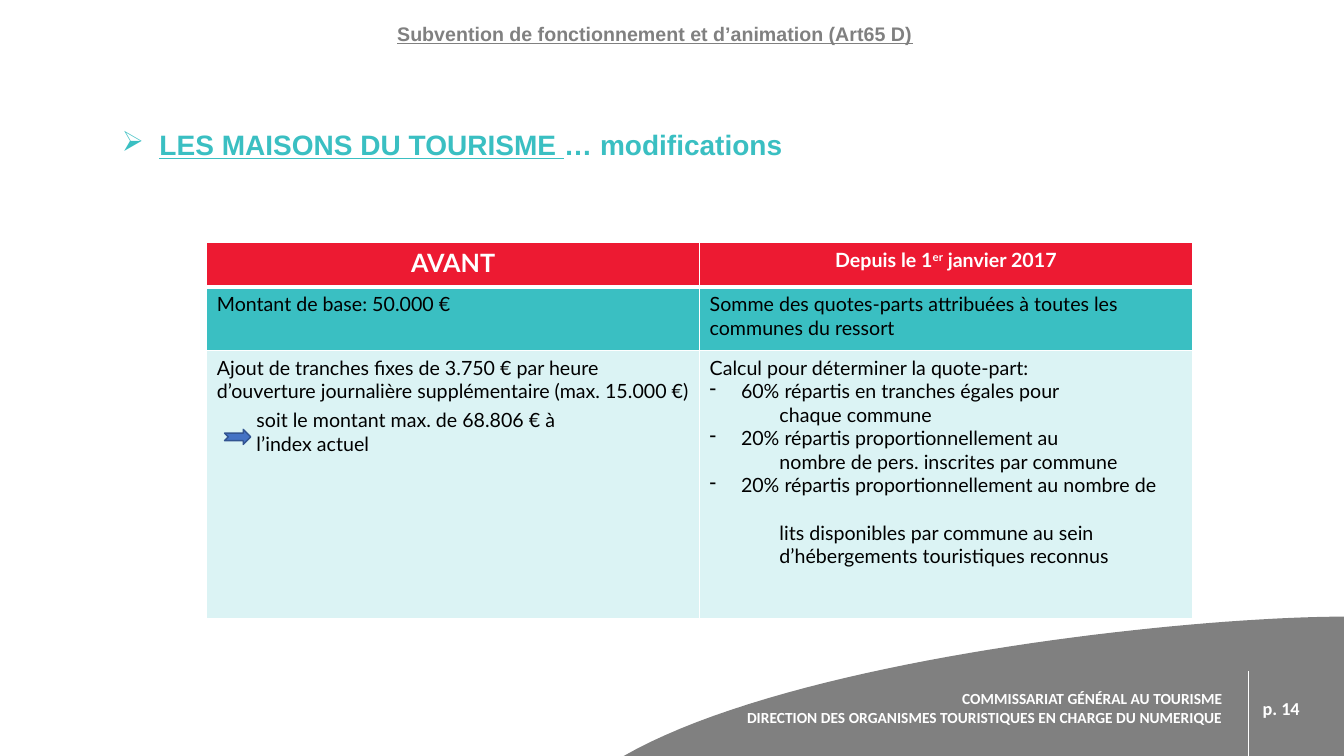
from lxml.etree import SubElement
from pptx import Presentation
from pptx.dml.color import RGBColor
from pptx.enum.shapes import MSO_CONNECTOR, MSO_SHAPE
from pptx.enum.text import MSO_ANCHOR, PP_ALIGN
from pptx.oxml.ns import qn
from pptx.util import Cm, Pt

WHITE = RGBColor(0xFF, 0xFF, 0xFF)
BLACK = RGBColor(0, 0, 0)
GREY = RGBColor(0x80, 0x80, 0x80)
RED = RGBColor(0xED, 0x1A, 0x32)
TEAL = RGBColor(0x3A, 0xBF, 0xC2)
PALE_TEAL = RGBColor(0xDB, 0xF3, 0xF4)
BLUE = RGBColor(0x44, 0x72, 0xC4)
DARK_BLUE = RGBColor(0x32, 0x54, 0x91)

SLIDE_WIDTH, SLIDE_HEIGHT = 33.87, 19.05
DASH = dict(bullet="-", indent=0.79, hanging=0.79)
CONTINUED = dict(indent=1.76)

BEFORE = [
    ("Ajout de tranches fixes de 3.750 € par heure d’ouverture journalière "
     "supplémentaire (max. 15.000 €)", {}),
    ("soit le montant max. de 68.806 € à", dict(indent=1, space_before=4)),
    ("l’index actuel", dict(indent=1)),
]
SINCE_2017 = [
    ("Calcul pour déterminer la quote-part:", {}),
    ("60% répartis en tranches égales pour", DASH),
    ("chaque commune", CONTINUED),
    ("20% répartis proportionnellement au", DASH),
    ("nombre de pers. inscrites par commune", CONTINUED),
    ("20% répartis proportionnellement au nombre de", DASH),
    ("lits disponibles par commune au sein", dict(CONTINUED, space_before=17)),
    ("d’hébergements touristiques reconnus", CONTINUED),
]


def add_run(paragraph, text, font="Lato", size=14, color=BLACK, bold=False,
            underline=False, superscript=False):
    run = paragraph.add_run()
    run.text = text
    run.font.name = font
    run.font.size = Pt(size)
    run.font.color.rgb = color
    run.font.bold = bold
    run.font.underline = underline
    if superscript:
        run.font._element.set("baseline", "30000")


def write(frame, text, align=PP_ALIGN.LEFT, indent=0, hanging=0, bullet=None,
          space_before=0, line_spacing=1.0, **run_format):
    """Fill the frame's empty first paragraph, or append a new one."""
    paragraph = frame.paragraphs[0]
    if paragraph.runs:
        paragraph = frame.add_paragraph()
    properties = paragraph._p.get_or_add_pPr()
    properties.set("marL", str(Cm(indent)))
    properties.set("indent", str(-Cm(hanging)))
    if bullet:
        SubElement(properties, qn("a:buChar")).set("char", bullet)
    paragraph.alignment = align
    paragraph.space_before = Pt(space_before)
    paragraph.line_spacing = line_spacing
    add_run(paragraph, text, **run_format)
    return paragraph


def add_text_frame(slide, left, top, width, height, anchor=MSO_ANCHOR.TOP):
    box = slide.shapes.add_textbox(Cm(left), Cm(top), Cm(width), Cm(height))
    frame = box.text_frame
    frame.word_wrap = True
    frame.vertical_anchor = anchor
    return frame


def curve_points(start, control_1, control_2, end, steps=40):
    """Points along a cubic Bézier curve."""
    for step in range(1, steps + 1):
        t = step / steps
        weights = ((1 - t) ** 3, 3 * t * (1 - t) ** 2, 3 * t * t * (1 - t), t ** 3)
        corners = (start, control_1, control_2, end)
        yield tuple(Cm(sum(w * c[axis] for w, c in zip(weights, corners)))
                    for axis in (0, 1))


def add_footer(slide):
    start, end = (15.72, SLIDE_HEIGHT), (SLIDE_WIDTH, 15.54)
    builder = slide.shapes.build_freeform(Cm(start[0]), Cm(start[1]))
    builder.add_line_segments(
        [*curve_points(start, (20.02, 16.59), (29.92, 15.54), end),
         (Cm(SLIDE_WIDTH), Cm(SLIDE_HEIGHT))], close=True)
    hill = builder.convert_to_shape()
    hill.shadow.inherit = False
    hill.fill.solid()
    hill.fill.fore_color.rgb = GREY
    hill.line.fill.background()

    style = dict(font="Calibri", color=WHITE, bold=True)
    department = add_text_frame(slide, 17.22, 16.92, 13.84, 1.83, MSO_ANCHOR.MIDDLE)
    for line in ("COMMISSARIAT GÉNÉRAL AU TOURISME",
                 "DIRECTION DES ORGANISMES TOURISTIQUES EN CHARGE DU NUMERIQUE"):
        write(department, line, align=PP_ALIGN.RIGHT, size=11, **style)

    divider = slide.shapes.add_connector(
        MSO_CONNECTOR.STRAIGHT, Cm(31.45), Cm(16.92), Cm(31.45), Cm(SLIDE_HEIGHT))
    divider.line.color.rgb = WHITE
    divider.line.width = Pt(0.5)
    SubElement(divider._element.spPr, qn("a:effectLst"))

    page = add_text_frame(slide, 30.3, 16.92, 2.92, 1.83, MSO_ANCHOR.MIDDLE)
    write(page, "p. 14", indent=1.27, size=13, **style)


def format_cell(cell, fill, top=1, bottom=1):
    """Give a cell white borders (widths in points), then its fill."""
    properties = cell._tc.get_or_add_tcPr()
    for side, width in (("L", 1), ("R", 1), ("T", top), ("B", bottom)):
        border = SubElement(properties, qn(f"a:ln{side}"), w=str(Pt(width)))
        paint = SubElement(border, qn("a:solidFill"))
        SubElement(paint, qn("a:srgbClr"), val=str(WHITE))
    cell.fill.solid()
    cell.fill.fore_color.rgb = fill


def add_comparison(slide):
    row_heights = (1.12, 1.6, 6.74)
    table = slide.shapes.add_table(
        3, 2, Cm(5.21), Cm(6.12), Cm(24.84), Cm(sum(row_heights))).table
    for row, height in zip(table.rows, row_heights):
        row.height = Cm(height)
    row_formats = (dict(fill=RED, bottom=3), dict(fill=TEAL, top=3),
                   dict(fill=PALE_TEAL))
    for row, row_format in zip(table.rows, row_formats):
        for cell in row.cells:
            format_cell(cell, **row_format)

    heading = dict(color=WHITE, bold=True)
    write(table.cell(0, 0).text_frame, "AVANT", align=PP_ALIGN.CENTER, size=18,
          **heading)
    since = write(table.cell(0, 1).text_frame, "Depuis le 1",
                  align=PP_ALIGN.CENTER, **heading)
    add_run(since, "er", superscript=True, **heading)
    add_run(since, " janvier 2017", **heading)

    write(table.cell(1, 0).text_frame, "Montant de base: 50.000 €")
    write(table.cell(1, 1).text_frame,
          "Somme des quotes-parts attribuées à toutes les communes du ressort")
    for column, paragraphs in enumerate((BEFORE, SINCE_2017)):
        for text, text_format in paragraphs:
            write(table.cell(2, column).text_frame, text, **text_format)


def add_result_arrow(slide):
    arrow = slide.shapes.add_shape(
        MSO_SHAPE.NOTCHED_RIGHT_ARROW, Cm(5.66), Cm(10.82), Cm(0.66), Cm(0.38))
    arrow.shadow.inherit = False
    arrow.fill.solid()
    arrow.fill.fore_color.rgb = BLUE
    arrow.line.color.rgb = DARK_BLUE
    arrow.line.width = Pt(1)


def main():
    presentation = Presentation()
    presentation.slide_width = Cm(SLIDE_WIDTH)
    presentation.slide_height = Cm(SLIDE_HEIGHT)
    slide = presentation.slides.add_slide(presentation.slide_layouts[6])

    add_footer(slide)
    title = add_text_frame(slide, 2.46, 0.5, 28.09, 1.4)
    write(title, "Subvention de fonctionnement et d’animation (Art65 D)",
          align=PP_ALIGN.CENTER, line_spacing=0.9, font="Arial", size=14,
          color=GREY, bold=True, underline=True)
    subtitle = add_text_frame(slide, 2.82, 3.18, 28.32, 12.01)
    style = dict(font="Arial", size=20, color=TEAL, bold=True)
    topic = write(subtitle, "LES MAISONS DU TOURISME ", bullet="➢", indent=0.95,
                  hanging=0.95, line_spacing=0.9, underline=True, **style)
    add_run(topic, "… modifications", **style)
    add_comparison(slide)
    add_result_arrow(slide)
    presentation.save("out.pptx")


if __name__ == "__main__":
    main()
